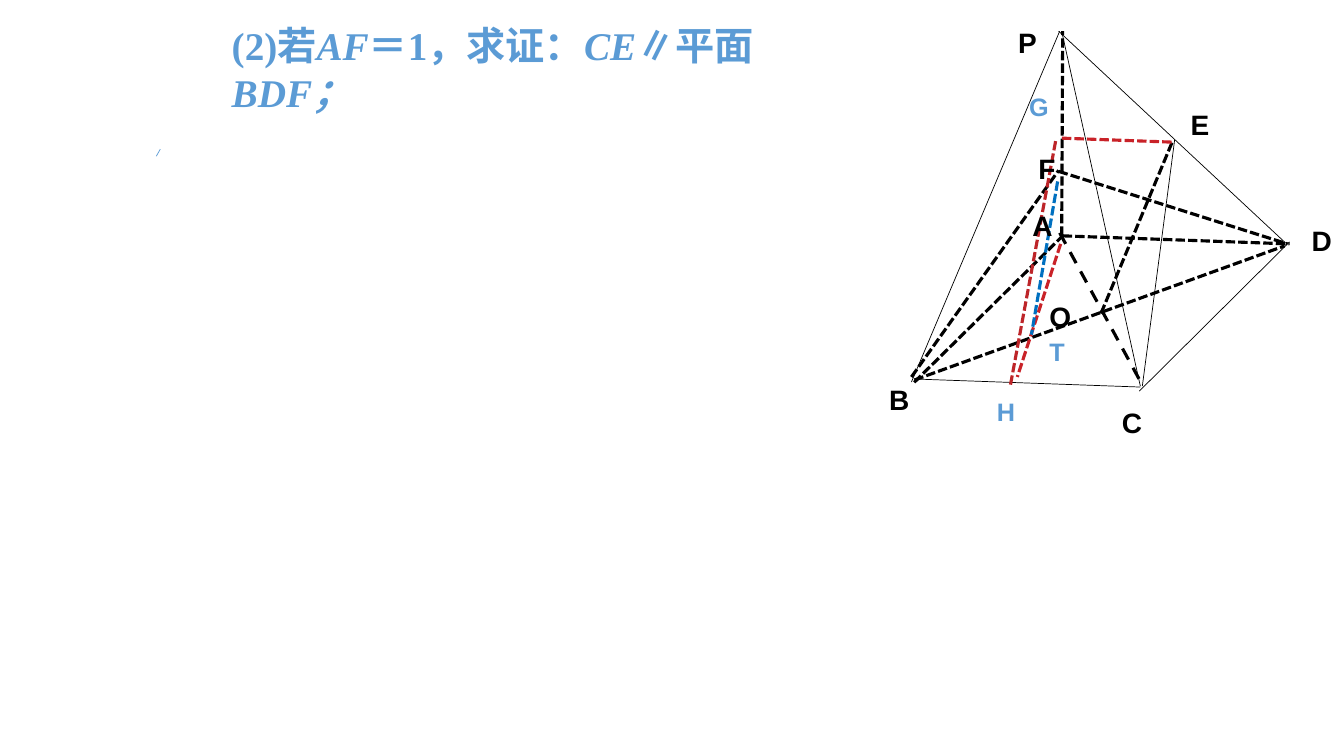
"""Draw the pyramid P-ABCD with its proof lines beside the question text."""
from pptx import Presentation
from pptx.dml.color import RGBColor
from pptx.enum.dml import MSO_LINE_DASH_STYLE as Dash
from pptx.enum.shapes import MSO_CONNECTOR as Conn
from pptx.enum.text import MSO_AUTO_SIZE as Fit
from pptx.oxml.ns import qn
from pptx.util import Emu, Pt
from lxml.etree import SubElement

COLORS = {"ink": "000000", "sky": "5B9BD5", "red": "C92228",
          "brick": "BD2529", "blue": "0070C0"}
SANS, SERIF, CJK = "Arial", "Times New Roman", "Noto Sans CJK SC"

TITLE = [("(2)", SERIF, False), ("若", SANS, False), ("AF", SERIF, True),
         ("＝", SANS, False), ("1", SERIF, False), ("，求证：", SANS, False),
         ("CE", SERIF, True), ("∥", CJK, False), ("平面", SANS, False),
         ("BDF；", SERIF, True)]

LABELS = [
    ("P", 1000, 20, 67, "ink"), ("B", 872, 375, 67, "ink"),
    ("A", 1014, 202, 67, "ink"), ("D", 1291, 217, 42, "ink"),
    ("F", 1020, 145, 67, "ink"), ("O", 1031, 292, 67, "ink"),
    ("E", 1171, 102, 67, "ink"), ("C", 1103, 397, 67, "ink"),
    ("G", 1011, 86, 40, "sky"), ("H", 979, 388, 83, "sky"),
    ("T", 1031, 329, 83, "sky"),
]
SIZES = {"ink": (20, 44), "sky": (18, 40)}

THIN, BOLD = 0.5, 2.25
LINES = [
    ("ink", THIN, None, [
        (907, 376, 1131, 384), (1279, 240, 1130, 388), (1051, 31, 904, 379),
        (1053, 31, 1131, 383), (1050, 31, 1275, 241), (1165, 139, 1133, 383)]),
    ("ink", BOLD, Dash.SQUARE_DOT, [
        (1054, 234, 1279, 242), (1055, 233, 906, 380), (1053, 234, 1054, 31),
        (1092, 311, 1163, 140), (904, 374, 1050, 169), (1050, 170, 1277, 242),
        (907, 377, 1274, 244)]),
    ("ink", BOLD, Dash.DASH, [(1051, 231, 1133, 382)]),
    ("red", BOLD, Dash.SQUARE_DOT, [
        (1162, 141, 1051, 137), (1052, 242, 1009, 374)]),
    ("brick", BOLD, Dash.SQUARE_DOT, [(1047, 140, 1002, 383)]),
    ("blue", BOLD, Dash.SQUARE_DOT, [(1049, 180, 1023, 332)]),
    ("sky", THIN, None, [(155, 155, 159, 148)]),
]


def px(*vals):
    return [Emu(v * 9144) for v in vals]


def tint(name):
    return RGBColor.from_string(COLORS[name])


def stroke(slide, ends, color, width, dash):
    line = slide.shapes.add_connector(Conn.STRAIGHT, *px(*ends))
    line.line.color.rgb = tint(color)
    line.line.width = Pt(width)
    if dash:
        line.line.dash_style = dash
    SubElement(line._element.spPr, qn("a:effectLst"))


def write(slide, box, runs, size, color):
    frame = slide.shapes.add_textbox(*px(*box)).text_frame
    frame.word_wrap = True
    frame.auto_size = Fit.SHAPE_TO_FIT_TEXT
    for text, face, slant in runs:
        run = frame.paragraphs[0].add_run()
        run.text = text
        font = run.font
        font.name, font.size = face, Pt(size)
        font.bold, font.italic = True, slant
        font.color.rgb = tint(color)


def main():
    deck = Presentation()
    deck.slide_width, deck.slide_height = px(1333, 750)
    slide = deck.slides.add_slide(deck.slide_layouts[6])
    for color, width, dash, group in LINES:
        for ends in group:
            stroke(slide, ends, color, width, dash)
    for text, left, top, wide, color in LABELS:
        size, high = SIZES[color]
        write(slide, (left, top, wide, high), [(text, SANS, False)], size, color)
    write(slide, (220, 16, 642, 57), TITLE, 28, "sky")
    deck.save("out.pptx")


if __name__ == "__main__":
    main()
